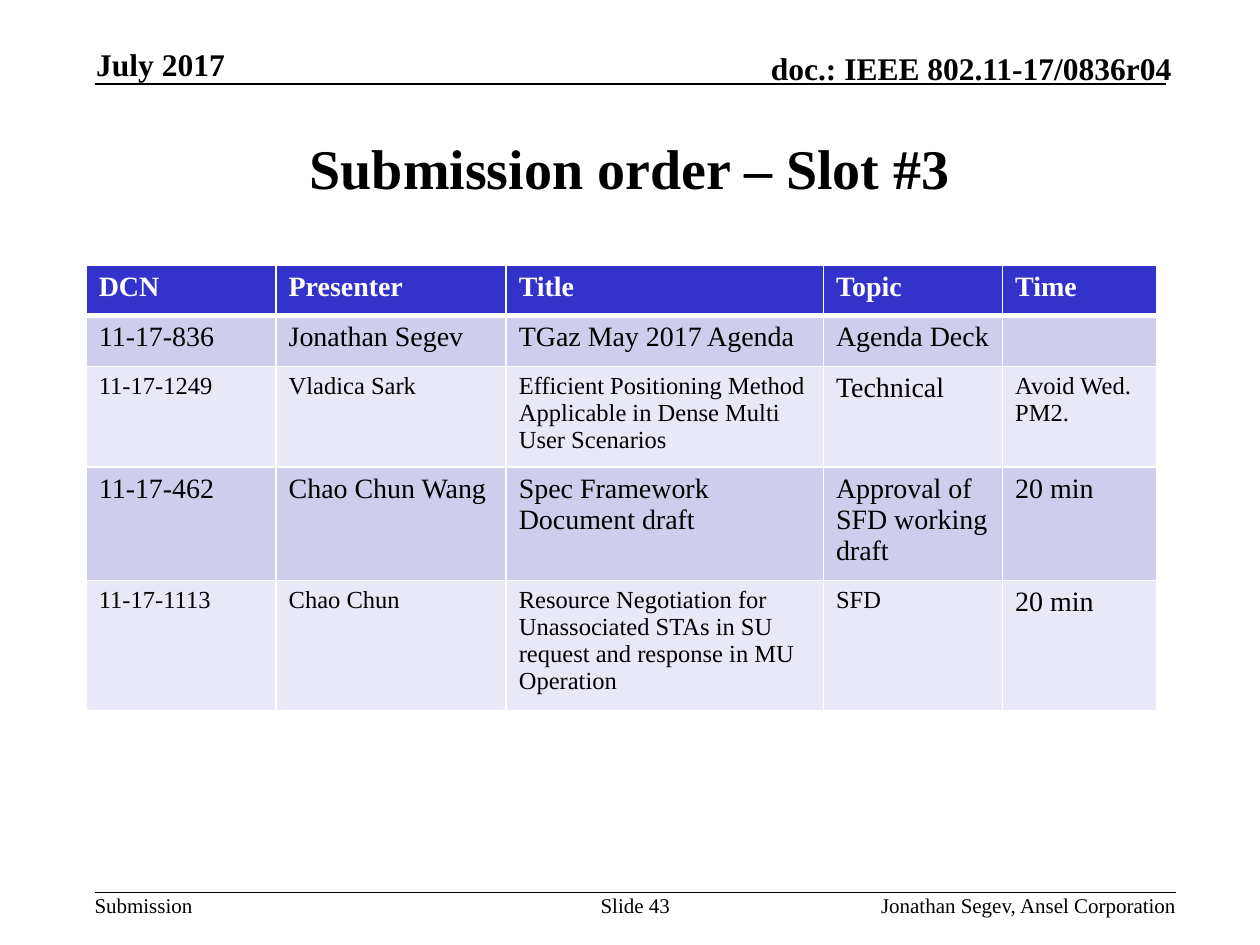
from lxml import etree
from pptx import Presentation
from pptx.dml.color import RGBColor
from pptx.enum import shapes, text
from pptx.oxml import ns
from pptx.util import Pt

LEFT, CENTER, RIGHT = text.PP_ALIGN.LEFT, text.PP_ALIGN.CENTER, text.PP_ALIGN.RIGHT
TOP, MIDDLE, BOTTOM = (text.MSO_ANCHOR.TOP, text.MSO_ANCHOR.MIDDLE,
                       text.MSO_ANCHOR.BOTTOM)


def rgb(value):
    return RGBColor.from_string(value)


def write(tf, content, size=12, bold=False, color="000000",
          font="Times New Roman", align=LEFT):
    p = tf.paragraphs[0]
    p.alignment = align
    r = p.add_run()
    r.text = content
    r.font.name = font
    r.font.size = Pt(size)
    r.font.bold = bold
    r.font.color.rgb = rgb(color)


class SlideBuilder:
    ink = "000000"
    white = "FFFFFF"
    header_fill = "3333CC"
    bands = ("CECEEC", "E8E8F6")

    def __init__(self, prs):
        self.s = prs.slides.add_slide(prs.slide_layouts[6])

    def rule(self, x1, x2, y):
        line = self.s.shapes.add_connector(
            shapes.MSO_CONNECTOR.STRAIGHT, Pt(x1), Pt(y), Pt(x2), Pt(y))
        line.line.color.rgb = rgb(self.ink)
        line.line.width = Pt(1)
        etree.SubElement(line._element.spPr, ns.qn("a:effectLst"))

    def label(self, content, x, y, w, h, anchor=TOP, wrap=True, **fmt):
        sp = self.s.shapes.add_textbox(Pt(x), Pt(y), Pt(w), Pt(h))
        tf = sp.text_frame
        tf.word_wrap = wrap
        tf.vertical_anchor = anchor
        tf.margin_left = tf.margin_right = tf.margin_top = tf.margin_bottom = 0
        write(tf, content, color=self.ink, **fmt)

    def border(self, cell, side, width):
        ln = etree.Element(ns.qn(f"a:ln{side}"), w=str(Pt(width)))
        fill = etree.SubElement(ln, ns.qn("a:solidFill"))
        etree.SubElement(fill, ns.qn("a:srgbClr"), val=self.white)
        return ln

    def cell(self, cell, content, size, header, fill, top, bottom):
        cell.fill.solid()
        cell.fill.fore_color.rgb = rgb(fill)
        if content:
            write(cell.text_frame, content, size=size, bold=header,
                  color=self.white if header else self.ink)
        # Borders come before the fill in the cell properties
        widths = {"L": 1, "R": 1, "T": top, "B": bottom}
        for i, (side, width) in enumerate(widths.items()):
            cell._tc.get_or_add_tcPr().insert(i, self.border(cell, side, width))

    def table(self, rows, x, y, widths, heights):
        frame = self.s.shapes.add_table(len(rows), len(widths), Pt(x), Pt(y),
                                        Pt(sum(widths)), Pt(sum(heights)))
        tbl = frame.table
        for column, width in zip(tbl.columns, widths):
            column.width = Pt(width)
        for i, (row, height) in enumerate(zip(rows, heights)):
            tbl.rows[i].height = Pt(height)
            header = i == 0
            fill = self.header_fill if header else self.bands[(i - 1) % 2]
            for j, (content, size) in enumerate(row):
                self.cell(tbl.cell(i, j), content, size, header, fill,
                          top=3 if i == 1 else 1, bottom=3 if header else 1)


def sized(size, *contents):
    return [(content, size) for content in contents]


def main():
    prs = Presentation()
    prs.slide_width, prs.slide_height = Pt(720), Pt(540)
    b = SlideBuilder(prs)

    # Header
    b.rule(54, 666, 48.2)
    b.label("July 2017", 55, 26, 148, 21.6, anchor=BOTTOM, size=18, bold=True)
    b.label("doc.: IEEE 802.11-17/0836r04", 394, 28, 275.5, 21.6,
            anchor=BOTTOM, size=18, bold=True, align=RIGHT)

    # Title
    b.label("Submission order – Slot #3", 54, 54, 612, 83.5,
            anchor=MIDDLE, size=32, bold=True, align=CENTER)

    # Submissions
    rows = [
        sized(16, "DCN", "Presenter", "Title", "Topic", "Time"),
        sized(16, "11-17-836", "Jonathan Segev", "TGaz May 2017 Agenda",
              "Agenda Deck", ""),
        sized(14, "11-17-1249", "Vladica Sark",
              "Efficient Positioning Method Applicable in Dense Multi "
              "User Scenarios")
        + sized(16, "Technical") + sized(14, "Avoid Wed. PM2."),
        sized(16, "11-17-462", "Chao Chun Wang",
              "Spec Framework Document draft",
              "Approval of SFD working draft", "20 min"),
        sized(14, "11-17-1113", "Chao Chun",
              "Resource Negotiation for Unassociated STAs in SU request "
              "and response in MU Operation", "SFD")
        + sized(16, "20 min"),
    ]
    b.table(rows, 49.3, 151.3, widths=(108.5, 131.5, 181.3, 102.4, 88),
            heights=(29, 29, 53.7, 60.6, 68.4))

    # Footer
    b.rule(54, 672, 510)
    b.label("Submission", 54, 510, 56, 14.4, wrap=False)
    b.label("Slide 43", 342, 510, 42, 28.8, align=CENTER)
    b.label("Jonathan Segev, Ansel Corporation", 422, 510, 250, 14.4,
            align=RIGHT)

    prs.save("out.pptx")


if __name__ == "__main__":
    main()
